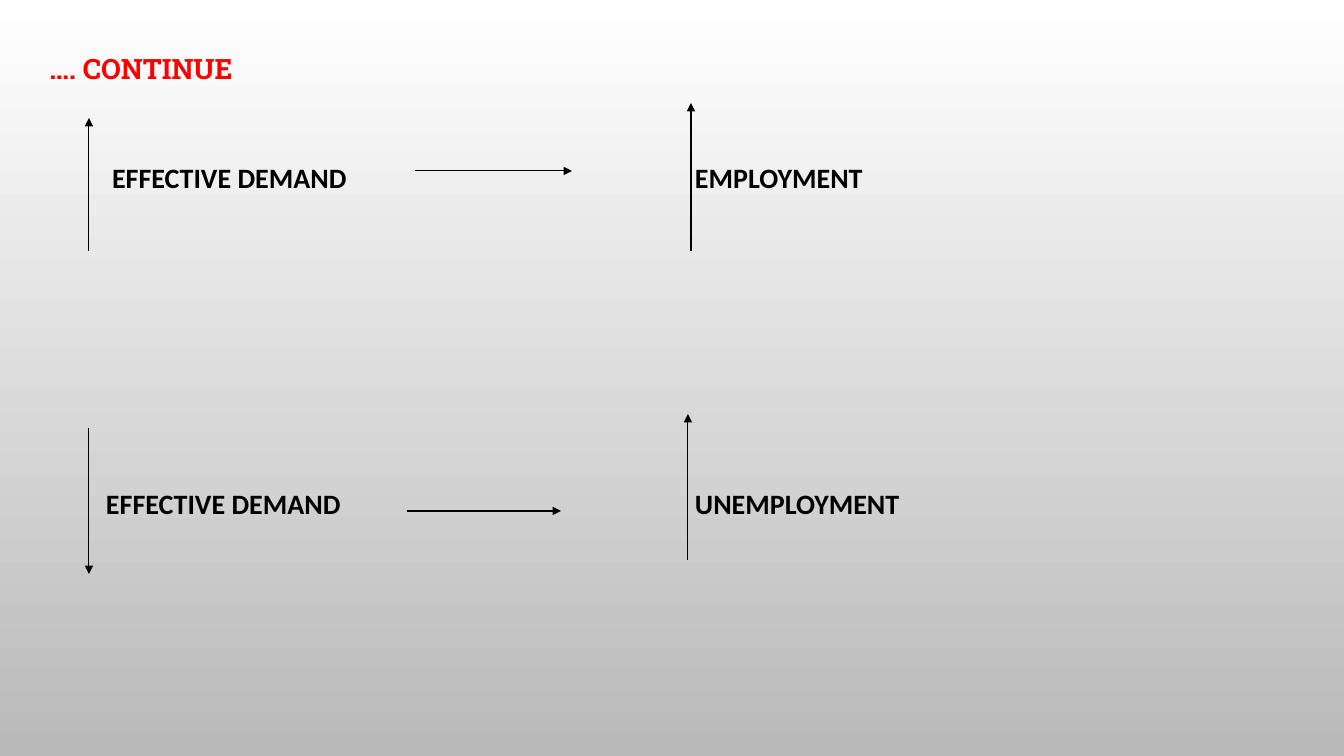
from lxml import etree
from pptx import Presentation
from pptx.dml.color import RGBColor
from pptx.enum.shapes import MSO_CONNECTOR
from pptx.enum.text import MSO_ANCHOR, MSO_AUTO_SIZE, PP_ALIGN
from pptx.oxml.ns import qn
from pptx.util import Emu, Pt

STRAIGHT = MSO_CONNECTOR.STRAIGHT
TOP, MIDDLE = MSO_ANCHOR.TOP, MSO_ANCHOR.MIDDLE
LEFT = PP_ALIGN.LEFT
BLACK = RGBColor(0, 0, 0)
RED = RGBColor(0xFF, 0, 0)
WHITE = RGBColor(0xFF, 0xFF, 0xFF)
GRAY = RGBColor(0xB9, 0xB9, 0xB9)

TITLE = "…. CONTINUE"
TITLE_BOX = (39, 48, 1266, 40)
TITLE_FONT = {"name": "Roboto Slab", "size": Pt(20), "bold": True}

# box, then each line with its indent
COLUMNS = [
    ((39, 160, 600, 550), [("EFFECTIVE DEMAND", 63), ("EFFECTIVE DEMAND", 57)]),
    ((685, 160, 620, 550), [("EMPLOYMENT", 0), ("UNEMPLOYMENT", 0)]),
]
BODY_FONT = {"name": "Calibri", "size": Pt(20), "bold": True}
LINE_GAP = 293
INSET = 10

# x and y of the start, x and y of the head
ARROWS = [
    (89, 251, 89, 118),
    (415, 171, 572, 171),
    (691, 251, 691, 103),
    (89, 428, 89, 574),
    (407, 511, 561, 511),
    (688, 560, 688, 414),
]


def px(n):
    return Emu(round(n * 914400 / 100.8))


def set_attrs(obj, values):
    for name, value in values.items():
        setattr(obj, name, value)


def set_font(font, values, color):
    set_attrs(font, values)
    font.color.rgb = color


def place(sp, box, anchor):
    """Move a placeholder and fix its margins, anchor and wrapping."""
    set_attrs(sp, dict(zip(("left", "top", "width", "height"), map(px, box))))
    tf = sp.text_frame
    set_attrs(tf, {
        "margin_left": px(INSET), "margin_right": px(INSET),
        "margin_top": 0, "margin_bottom": 0, "word_wrap": True,
        "auto_size": MSO_AUTO_SIZE.NONE, "vertical_anchor": anchor,
    })
    return tf


def indent_plain(p, indent):
    """Drop the bullet of a paragraph and set its left indent."""
    pPr = p._p.get_or_add_pPr()
    pPr.set("marL", str(px(indent)))
    pPr.set("indent", "0")
    etree.SubElement(pPr, qn("a:buNone"))


def fill_column(sp, box, lines):
    tf = place(sp, box, TOP)
    for i, (text, indent) in enumerate(lines):
        p = tf.add_paragraph() if i else tf.paragraphs[0]
        indent_plain(p, indent)
        p.text = text
        p.alignment = LEFT
        p.line_spacing = 1.0
        p.space_before = px(LINE_GAP) if i else Pt(0)
        set_font(p.runs[0].font, BODY_FONT, BLACK)


def add_arrow(s, ends):
    line = s.shapes.add_connector(STRAIGHT, *map(px, ends))
    line.line.color.rgb = BLACK
    line.line.width = Pt(0.75)
    etree.SubElement(line.line._get_or_add_ln(), qn("a:tailEnd"), type="triangle")
    etree.SubElement(line._element.spPr, qn("a:effectLst"))


def main():
    prs = Presentation()
    prs.slide_width, prs.slide_height = px(1344), px(756)
    s = prs.slides.add_slide(prs.slide_layouts[3])

    fill = s.background.fill
    fill.gradient()
    fill.gradient_angle = 270
    for stop, position, color in zip(fill.gradient_stops, (0, 1), (WHITE, GRAY)):
        stop.position = position
        stop.color.rgb = color

    p = place(s.shapes.title, TITLE_BOX, MIDDLE).paragraphs[0]
    p.text = TITLE
    p.alignment = LEFT
    set_font(p.runs[0].font, TITLE_FONT, RED)

    for idx, (box, lines) in enumerate(COLUMNS, 1):
        fill_column(s.placeholders[idx], box, lines)
    for ends in ARROWS:
        add_arrow(s, ends)
    prs.save("out.pptx")


if __name__ == "__main__":
    main()
